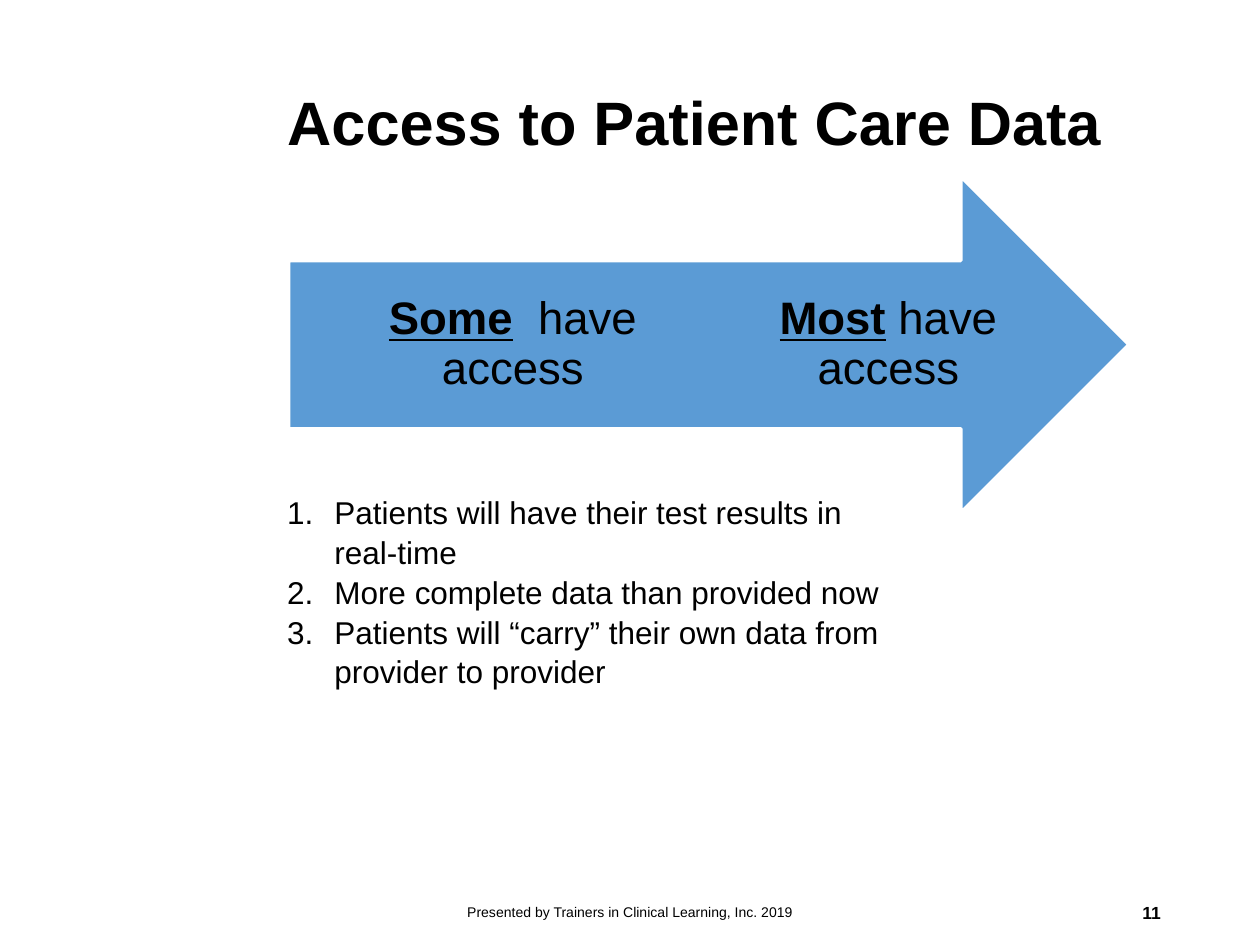
from lxml.etree import SubElement
from pptx import Presentation
from pptx.dml.color import RGBColor
from pptx.enum.shapes import MSO_SHAPE as Preset
from pptx.enum.text import MSO_ANCHOR as Anchor, MSO_AUTO_SIZE as AutoSize, PP_ALIGN as Align
from pptx.oxml.ns import qn
from pptx.util import Cm, Pt

COLORS = {"text": "000000", "arrow": "5B9BD5", "outline": "FFFFFF"}
TITLE = "Access to Patient Care Data"
ACCESS_LEVELS = [("Some", "  have access"), ("Most", " have access")]
BENEFITS = [
    "Patients will have their test results in real-time",
    "More complete data than provided now",
    "Patients will “carry” their own data from provider to provider",
]
FOOTER = "Presented by Trainers in Clinical Learning, Inc. 2019"
PAGE = "11"

LEFT = 5.54
ARROW = (5.82, 3.56, 16.94, 6.78)
LABEL_LEFT, LABEL_STEP, LABEL_WIDTH = 7.19, 7.57, 6.3
FOOTER_TOP, FOOTER_HEIGHT = 17.88, 1.02


def rgb(name):
    """Return the named colour."""
    return RGBColor.from_string(COLORS[name])


def place(shape, left, top, width, height):
    """Move and size a shape, in centimetres."""
    shape.left, shape.top, shape.width, shape.height = map(Cm, (left, top, width, height))


def write(shape, text, size, align=Align.LEFT, anchor=Anchor.MIDDLE, bold=False,
          lead="", spacing=1.0, numbered=False, margins=(0.25, 0.13)):
    """Fill a shape with one paragraph per line, after an optional underlined lead."""
    frame = shape.text_frame
    frame.text = text
    frame.word_wrap = True
    frame.auto_size = AutoSize.NONE
    frame.vertical_anchor = anchor
    frame.margin_left = frame.margin_right = Cm(margins[0])
    frame.margin_top = frame.margin_bottom = Cm(margins[1])
    for paragraph in frame.paragraphs:
        if numbered:
            properties = paragraph._p.get_or_add_pPr()
            properties.set("marL", str(Cm(0.95)))
            properties.set("indent", str(-Cm(0.95)))
            SubElement(properties, qn("a:buFont"), typeface="Arial")
            SubElement(properties, qn("a:buAutoNum"), type="arabicPeriod")
        paragraph.alignment = align
        paragraph.line_spacing = spacing
        paragraph.space_before = paragraph.space_after = Pt(0)
        if lead:
            paragraph.runs[0].text = lead
            paragraph.add_run().text = text
        for index, run in enumerate(paragraph.runs):
            is_lead = bool(lead) and index == 0
            run.font.name = "Arial"
            run.font.size = Pt(size)
            run.font.bold = bold or is_lead
            run.font.underline = is_lead
            run.font.color.rgb = rgb("text")


def add_label(shapes, box, text, size, **style):
    """Add a text box holding the given text."""
    label = shapes.add_textbox(*map(Cm, box))
    write(label, text, size, **style)


def main():
    """Build the slide and save it."""
    deck = Presentation()
    deck.slide_width, deck.slide_height = Cm(25.4), Cm(19.05)
    slide = deck.slides.add_slide(deck.slide_layouts[1])
    title, benefits = slide.placeholders

    place(title, LEFT, 0.69, 18.14, 3.68)
    write(title, TITLE, 35, bold=True, spacing=0.9)

    progress = slide.shapes.add_group_shape().shapes
    arrow = progress.add_shape(Preset.RIGHT_ARROW, *map(Cm, ARROW))
    arrow.shadow.inherit = False
    arrow.fill.solid()
    arrow.fill.fore_color.rgb = rgb("arrow")
    arrow.line.color.rgb = rgb("outline")
    arrow.line.width = Pt(2)
    label_top, label_height = ARROW[1] + ARROW[3] / 4, ARROW[3] / 2
    for index, (amount, rest) in enumerate(ACCESS_LEVELS):
        box = (LABEL_LEFT + index * LABEL_STEP, label_top, LABEL_WIDTH, label_height)
        add_label(progress, box, rest, 26, lead=amount, align=Align.CENTER,
                  spacing=0.9, margins=(0, 0.74))

    place(benefits, LEFT, 9.78, 13.08, 4.11)
    write(benefits, "\n".join(BENEFITS), 18, anchor=Anchor.TOP, spacing=1.05, numbered=True)

    add_label(slide.shapes, (8.41, FOOTER_TOP, 8.59, FOOTER_HEIGHT), FOOTER, 8,
              align=Align.CENTER)
    add_label(slide.shapes, (17.93, FOOTER_TOP, 5.72, FOOTER_HEIGHT), PAGE, 10,
              align=Align.RIGHT, bold=True)
    deck.save("out.pptx")


if __name__ == "__main__":
    main()
